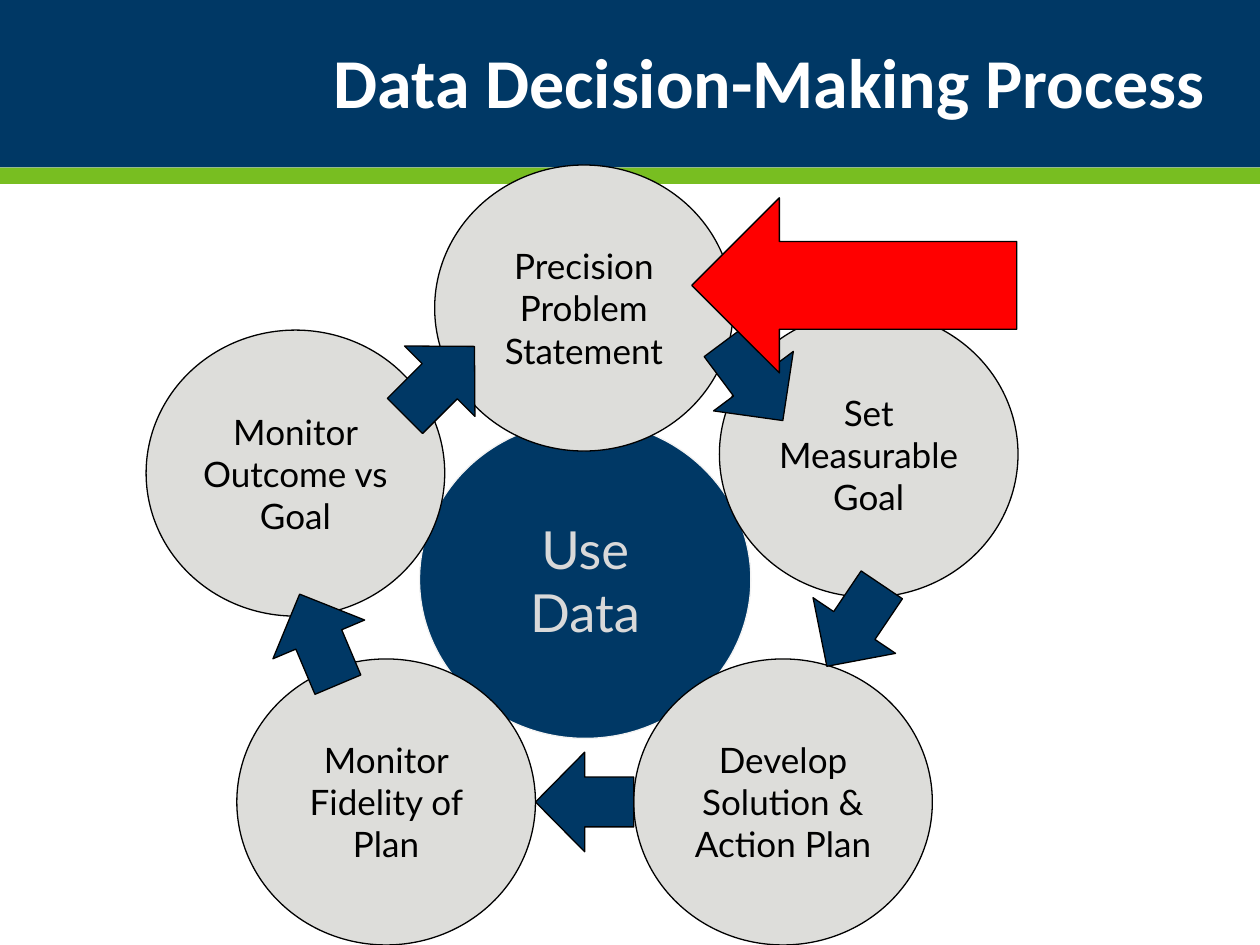
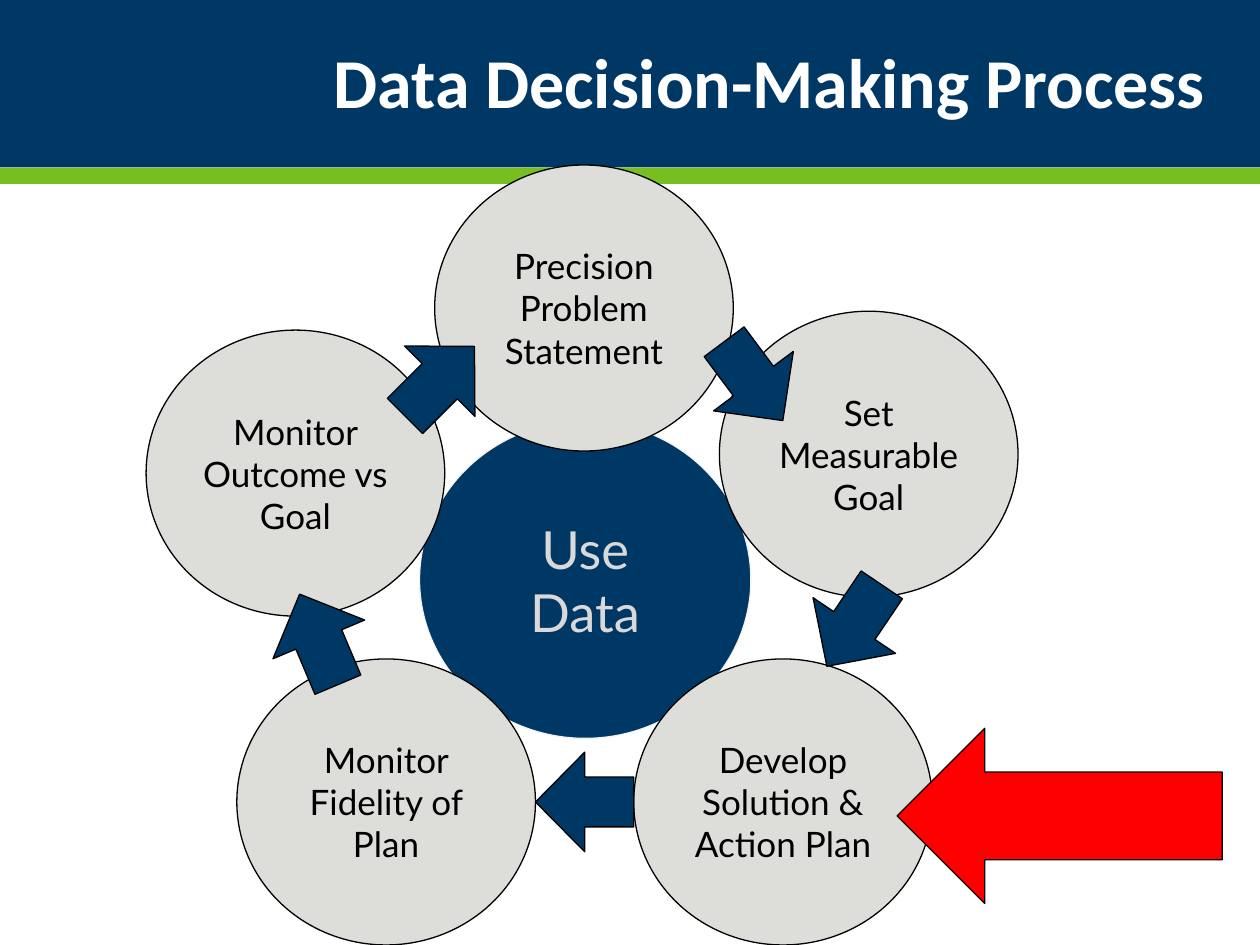
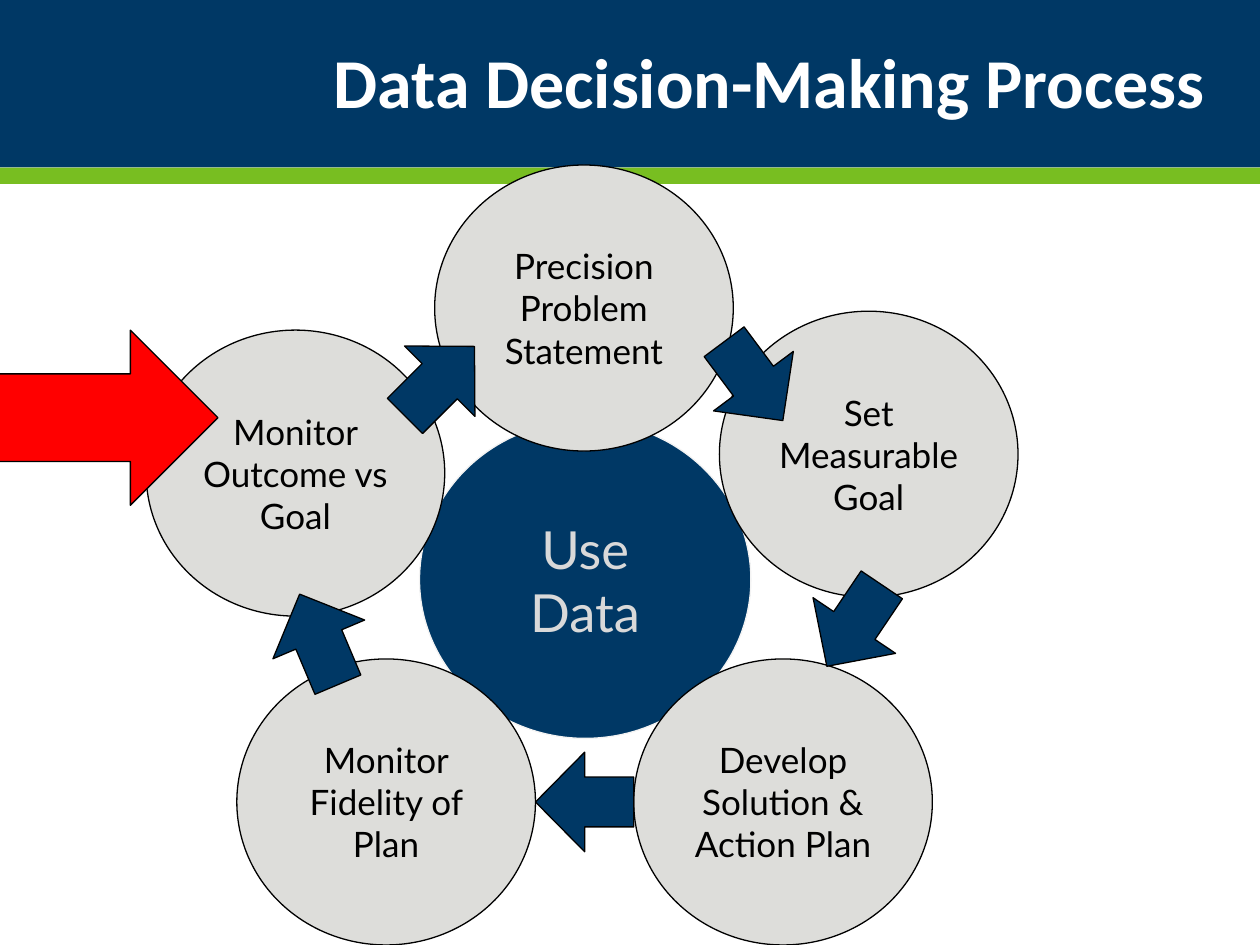
from dataclasses import dataclass

from pptx import Presentation
from pptx.dml.color import RGBColor
from pptx.enum.shapes import MSO_SHAPE as Preset
from pptx.enum.text import MSO_ANCHOR as Anchor, PP_ALIGN as Align
from pptx.util import Emu, Pt

EMU_PER_PX = 9144
PAGE_WIDTH, PAGE_HEIGHT = 1000, 750
NAVY, GREEN, RED = "003865", "78BE21", "FF0000"
STONE, SILVER, MIST = "DDDDDA", "D9D9D9", "F3F3F3"
BLACK, WHITE = "000000", "FFFFFF"


@dataclass(frozen=True)
class Area:
    left: int
    top: int
    width: int
    height: int


@dataclass(frozen=True)
class Step:
    label: str
    left: int
    top: int


@dataclass(frozen=True)
class Arrow:
    left: int
    top: int
    angle: float


STEPS = (
    Step("Precision Problem Statement", 345, 131),
    Step("Set Measurable Goal", 571, 247),
    Step("Develop Solution & Action Plan", 503, 523),
    Step("Monitor Fidelity of Plan", 188, 523),
    Step("Monitor Outcome vs Goal", 116, 262),
)
STEP_ARROWS = (
    Arrow(639, 457, 124),
    Arrow(425, 597, 180),
    Arrow(214, 468, 247.1),
    Arrow(310, 263, 315),
    Arrow(559, 263, 53.3),
)
POINTERS = (Arrow(549, 157, 180), Arrow(712, 578, 180), Arrow(-85, 262, 0))


def px(length: int) -> Emu:
    return Emu(length * EMU_PER_PX)


def colour(value: str) -> RGBColor:
    return RGBColor.from_string(value)


def place(area: Area) -> tuple[Emu, Emu, Emu, Emu]:
    return px(area.left), px(area.top), px(area.width), px(area.height)


def write(box, text: str, *, size: int, ink: str, font: str = "Lato",
          bold: bool = False, inset_x: int = 10, inset_y: int = 10,
          line_spacing: float = 1.0) -> None:
    frame = box.text_frame
    frame.word_wrap = True
    frame.vertical_anchor = Anchor.MIDDLE
    frame.margin_left = frame.margin_right = px(inset_x)
    frame.margin_top = frame.margin_bottom = px(inset_y)
    para = frame.paragraphs[0]
    para.alignment = Align.CENTER
    para.line_spacing = line_spacing
    span = para.add_run()
    span.text = text
    span.font.name = font
    span.font.size = Pt(size)
    span.font.bold = bold
    span.font.color.rgb = colour(ink)


def draw_shape(page, preset: Preset, area: Area, fill: str, line: str | None = None):
    shape = page.shapes.add_shape(preset, *place(area))
    shape.shadow.inherit = False
    shape.fill.solid()
    shape.fill.fore_color.rgb = colour(fill)
    if line is None:
        shape.line.fill.background()
    else:
        shape.line.color.rgb = colour(line)
        shape.line.width = Pt(0.75)
    return shape


def draw_arrow(page, arrow: Arrow, width: int, height: int, fill: str) -> None:
    area = Area(arrow.left, arrow.top, width, height)
    shape = draw_shape(page, Preset.RIGHT_ARROW, area, fill, BLACK)
    shape.rotation = arrow.angle


def draw_bands(page) -> None:
    draw_shape(page, Preset.RECTANGLE, Area(0, 0, PAGE_WIDTH, 133), NAVY)
    draw_shape(page, Preset.RECTANGLE, Area(0, 133, PAGE_WIDTH, 13), GREEN)


def draw_title(page, text: str) -> None:
    box = page.shapes.add_textbox(*place(Area(242, 18, 737, 100)))
    write(box, text, size=40, ink=WHITE, font="Calibri", bold=True,
          inset_x=7, inset_y=4, line_spacing=0.9)


def draw_cycle(page) -> None:
    hub = draw_shape(page, Preset.OVAL, Area(333, 334, 263, 252), NAVY, MIST)
    write(hub, "Use Data", size=30, ink=SILVER)
    for step in STEPS:
        area = Area(step.left, step.top, 237, 227)
        circle = draw_shape(page, Preset.OVAL, area, STONE, BLACK)
        write(circle, step.label, size=20, ink=BLACK)
    for arrow in STEP_ARROWS:
        draw_arrow(page, arrow, 78, 79, NAVY)


def main() -> None:
    deck = Presentation()
    deck.slide_width, deck.slide_height = px(PAGE_WIDTH), px(PAGE_HEIGHT)
    blank = deck.slide_layouts[6]
    for pointer in POINTERS:
        page = deck.slides.add_slide(blank)
        draw_bands(page)
        draw_cycle(page)
        draw_title(page, "Data Decision-Making Process")
        draw_arrow(page, pointer, 258, 139, RED)
    deck.save("out.pptx")


if __name__ == "__main__":
    main()
